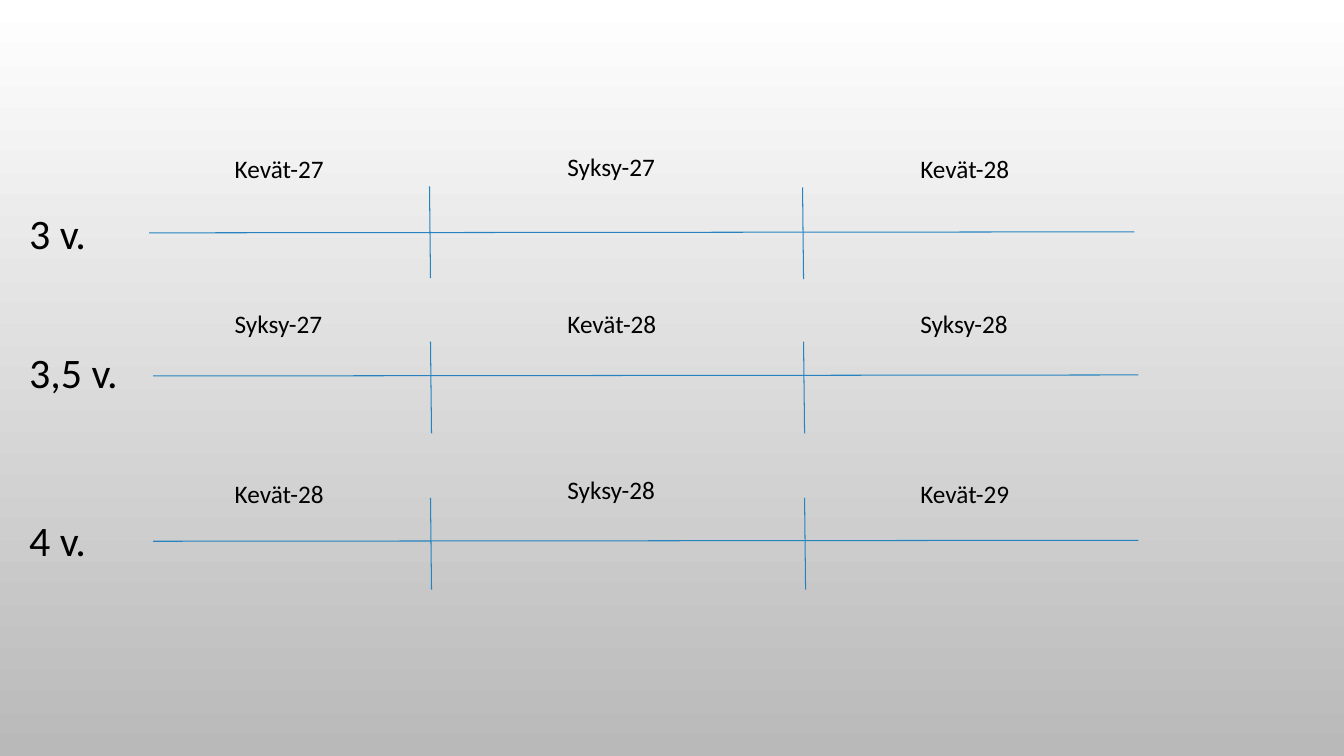
from dataclasses import dataclass

from lxml.etree import SubElement
from pptx import Presentation
from pptx.dml.color import RGBColor
from pptx.enum.shapes import MSO_CONNECTOR
from pptx.enum.text import MSO_AUTO_SIZE
from pptx.oxml.ns import qn
from pptx.util import Emu, Pt

EMU_PER_PX = 9144  # 100 px to the inch


@dataclass(frozen=True)
class Theme:
    font: str = "Calibri"
    text: str = "000000"
    line: str = "2683BF"
    background_top: str = "FFFFFF"
    background_bottom: str = "B9B9B9"
    duration_size: int = 30
    term_size: int = 18
    line_width: float = 0.75


@dataclass(frozen=True)
class Timeline:
    duration: str
    duration_top: int
    axis_left: int
    axis_top: int
    ticks: tuple  # (left, top) of each tick
    terms: tuple  # (name, top) of each term


TIMELINES = (
    Timeline("3 v.", 201, 148, 231, ((426, 185), (796, 186)),
             (("Kevät-27", 147), ("Syksy-27", 145), ("Kevät-28", 147))),
    Timeline("3,5 v.", 339, 152, 373, ((427, 339), (797, 339)),
             (("Syksy-27", 301), ("Kevät-28", 301), ("Syksy-28", 301))),
    Timeline("4 v.", 506, 152, 537, ((427, 494), (798, 494)),
             (("Kevät-28", 470), ("Syksy-28", 466), ("Kevät-29", 470))),
)
DURATION_LEFT = 19
TERM_LEFTS = (223, 553, 903)
BOX_WIDTH = 117
DURATION_HEIGHT, TERM_HEIGHT = 61, 40
AXIS_LENGTH, TICK_LENGTH = 977, 91


def px(length):
    return Emu(length * EMU_PER_PX)


class SlideBuilder:
    def __init__(self, slide, theme):
        self.slide = slide
        self.theme = theme

    def background(self):
        fill = self.slide.background.fill
        fill.gradient()
        fill.gradient_angle = 270
        colors = (self.theme.background_top, self.theme.background_bottom)
        for stop, color in zip(fill.gradient_stops, colors):
            stop.color.rgb = RGBColor.from_string(color)

    def line(self, left, top, dx, dy):
        connector = self.slide.shapes.add_connector(
            MSO_CONNECTOR.STRAIGHT, px(left), px(top), px(left + dx), px(top + dy))
        connector.line.color.rgb = RGBColor.from_string(self.theme.line)
        connector.line.width = Pt(self.theme.line_width)
        SubElement(connector.element.spPr, qn("a:effectLst"))

    def text(self, content, left, top, height, size):
        box = self.slide.shapes.add_textbox(px(left), px(top), px(BOX_WIDTH), px(height))
        frame = box.text_frame
        frame.word_wrap = True
        frame.auto_size = MSO_AUTO_SIZE.SHAPE_TO_FIT_TEXT
        run = frame.paragraphs[0].add_run()
        run.text = content
        run.font.name = self.theme.font
        run.font.size = Pt(size)
        run.font.color.rgb = RGBColor.from_string(self.theme.text)

    def timeline(self, timeline):
        self.line(timeline.axis_left, timeline.axis_top, AXIS_LENGTH, -1)
        for left, top in timeline.ticks:
            self.line(left, top, 1, TICK_LENGTH)
        self.text(timeline.duration, DURATION_LEFT, timeline.duration_top,
                  DURATION_HEIGHT, self.theme.duration_size)
        for left, (name, top) in zip(TERM_LEFTS, timeline.terms):
            self.text(name, left, top, TERM_HEIGHT, self.theme.term_size)


def main():
    presentation = Presentation()
    presentation.slide_width = px(1333)
    presentation.slide_height = px(750)
    blank_layout = presentation.slide_layouts.get_by_name("Blank")
    builder = SlideBuilder(presentation.slides.add_slide(blank_layout), Theme())
    builder.background()
    for timeline in TIMELINES:
        builder.timeline(timeline)
    presentation.save("out.pptx")


if __name__ == "__main__":
    main()
